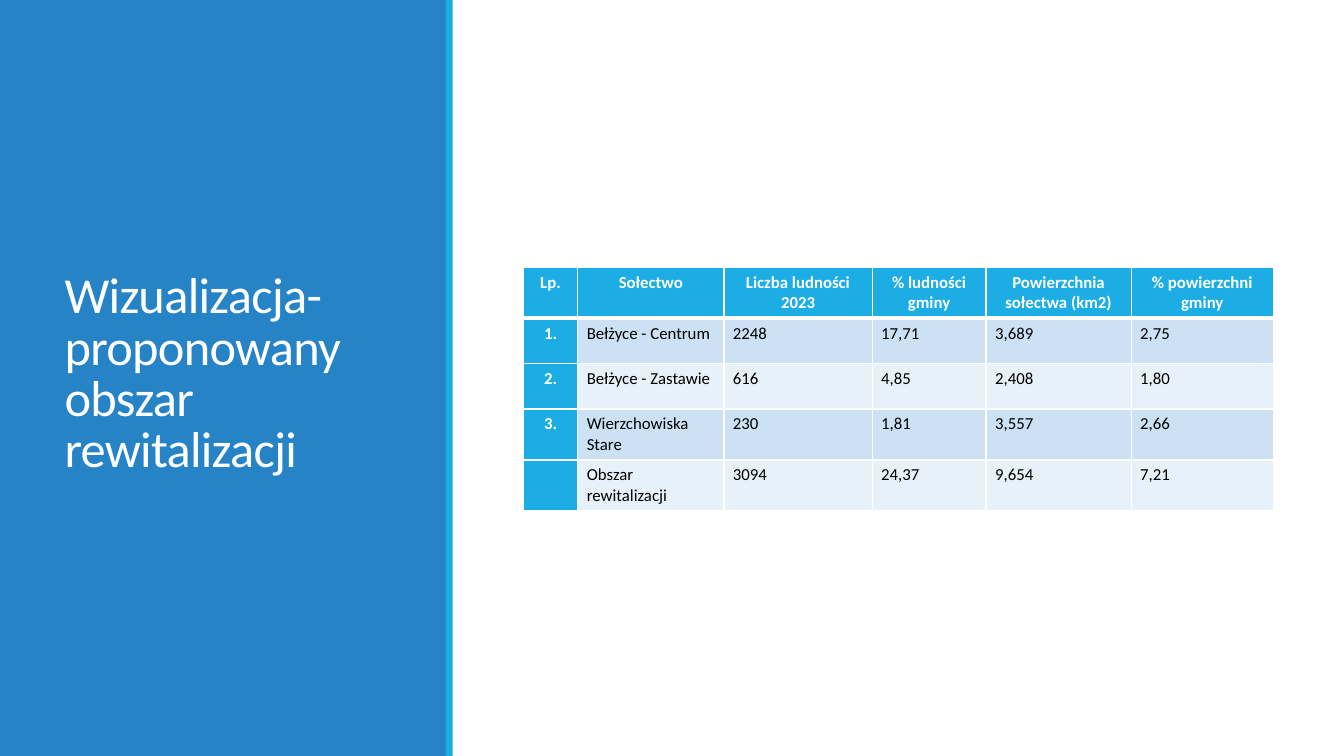
from lxml import etree
from pptx import Presentation
from pptx.dml.color import RGBColor
from pptx.enum.shapes import MSO_SHAPE
from pptx.enum.text import MSO_ANCHOR, PP_ALIGN
from pptx.oxml.ns import qn
from pptx.util import Inches, Pt

RECTANGLE = MSO_SHAPE.RECTANGLE
MIDDLE = MSO_ANCHOR.MIDDLE
CENTER, LEFT, JUSTIFY = PP_ALIGN.CENTER, PP_ALIGN.LEFT, PP_ALIGN.JUSTIFY

WHITE = RGBColor(0xFF, 0xFF, 0xFF)
BLACK = RGBColor(0x00, 0x00, 0x00)
BLUE = RGBColor(0x26, 0x83, 0xC6)
CYAN = RGBColor(0x1C, 0xAD, 0xE4)
BANDS = [RGBColor(0xCC, 0xE2, 0xF4), RGBColor(0xE7, 0xF1, 0xF9)]
FONT = "Calibri"

COLUMN_WIDTHS = [0.54, 1.45, 1.47, 1.13, 1.44, 1.41]
ROW_HEIGHT = 0.45
ROWS = [
    ["Lp.", "Sołectwo", "Liczba ludności 2023", "% ludności gminy",
     "Powierzchnia sołectwa (km2)", "% powierzchni gminy"],
    ["1.", "Bełżyce - Centrum", "2248", "17,71", "3,689", "2,75"],
    ["2.", "Bełżyce - Zastawie", "616", "4,85", "2,408", "1,80"],
    ["3.", "Wierzchowiska Stare", "230", "1,81", "3,557", "2,66"],
    ["", "Obszar rewitalizacji", "3094", "24,37", "9,654", "7,21"],
]


def add_run(paragraph, text, size, color, bold=False):
    run = paragraph.add_run()
    run.text = text
    run.font.name = FONT
    run.font.size = Pt(size)
    run.font.color.rgb = color
    run.font.bold = bold
    return run


def set_border(cell, side, width):
    """Draw a white border on one side of the cell: L, R, T or B."""
    line = etree.SubElement(cell._tc.get_or_add_tcPr(), qn(f"a:ln{side}"), w=str(Pt(width)))
    fill = etree.SubElement(line, qn("a:solidFill"))
    etree.SubElement(fill, qn("a:srgbClr"), val=str(WHITE))


prs = Presentation()
prs.slide_width, prs.slide_height = Inches(13.33), Inches(7.5)
slide = prs.slides.add_slide(prs.slide_layouts[5])
shapes = slide.shapes
title = shapes.title

# Side panel with its accent stripe
for left, width, color in [(0, 4.43, BLUE), (4.42, 0.07, CYAN)]:
    panel = shapes.add_shape(RECTANGLE, Inches(left), 0, Inches(width), prs.slide_height)
    panel.shadow.inherit = False
    panel.fill.solid()
    panel.fill.fore_color.rgb = color
    panel.line.fill.background()

# Title, brought in front of the panel
shapes._spTree.append(title._element)
title.left, title.top = Inches(0.54), Inches(0.57)
title.width, title.height = Inches(3.37), Inches(6.31)
title.text_frame.word_wrap = True
title.text_frame.vertical_anchor = MIDDLE
heading = title.text_frame.paragraphs[0]
heading.alignment = LEFT
heading.line_spacing = 0.85
heading_run = add_run(heading, "Wizualizacja- proponowany obszar rewitalizacji", 36, WHITE)
heading_run.font._element.set("spc", "-50")

# Population and area table
table = shapes.add_table(
    len(ROWS), len(COLUMN_WIDTHS), Inches(5.19), Inches(2.65),
    Inches(sum(COLUMN_WIDTHS)), Inches(ROW_HEIGHT * len(ROWS))).table
table.first_col = True
for column, width in zip(table.columns, COLUMN_WIDTHS):
    column.width = Inches(width)

for r, values in enumerate(ROWS):
    table.rows[r].height = Inches(ROW_HEIGHT)
    for c, value in enumerate(values):
        cell = table.cell(r, c)
        is_heading = r == 0 or c == 0
        cell.margin_left = cell.margin_right = Inches(0.09)
        cell.margin_top = cell.margin_bottom = Inches(0.05)
        for side in "LRTB":
            under_header = (r, side) in [(0, "B"), (1, "T")]
            set_border(cell, side, 3 if under_header else 0.96)
        cell.fill.solid()
        cell.fill.fore_color.rgb = CYAN if is_heading else BANDS[(r - 1) % 2]
        paragraph = cell.text_frame.paragraphs[0]
        if is_heading:
            paragraph.alignment = CENTER
        elif value == "Obszar rewitalizacji":
            paragraph.alignment = JUSTIFY
        else:
            paragraph.alignment = LEFT
        if value:
            add_run(paragraph, value, 12, WHITE if is_heading else BLACK, is_heading)

prs.save("out.pptx")
